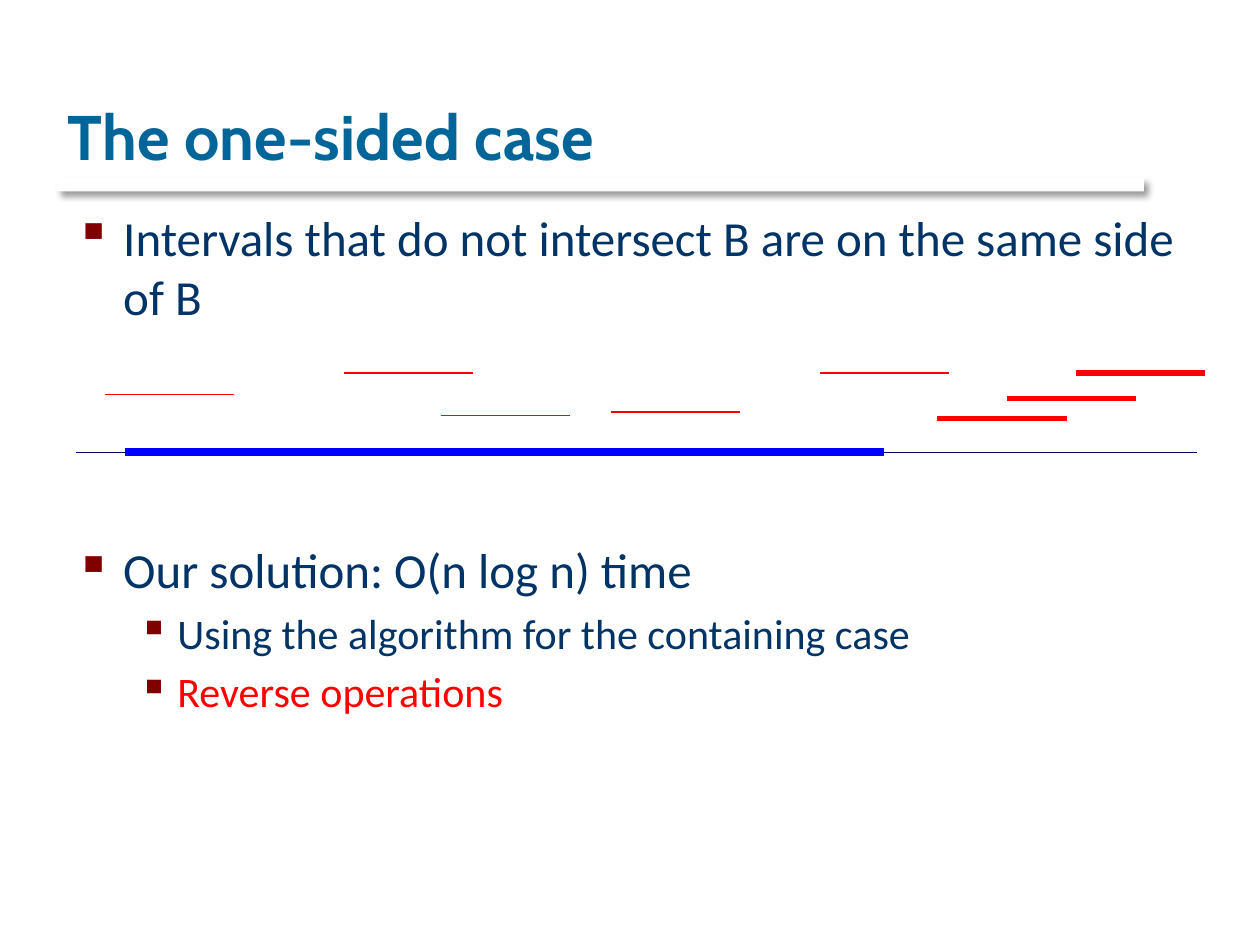
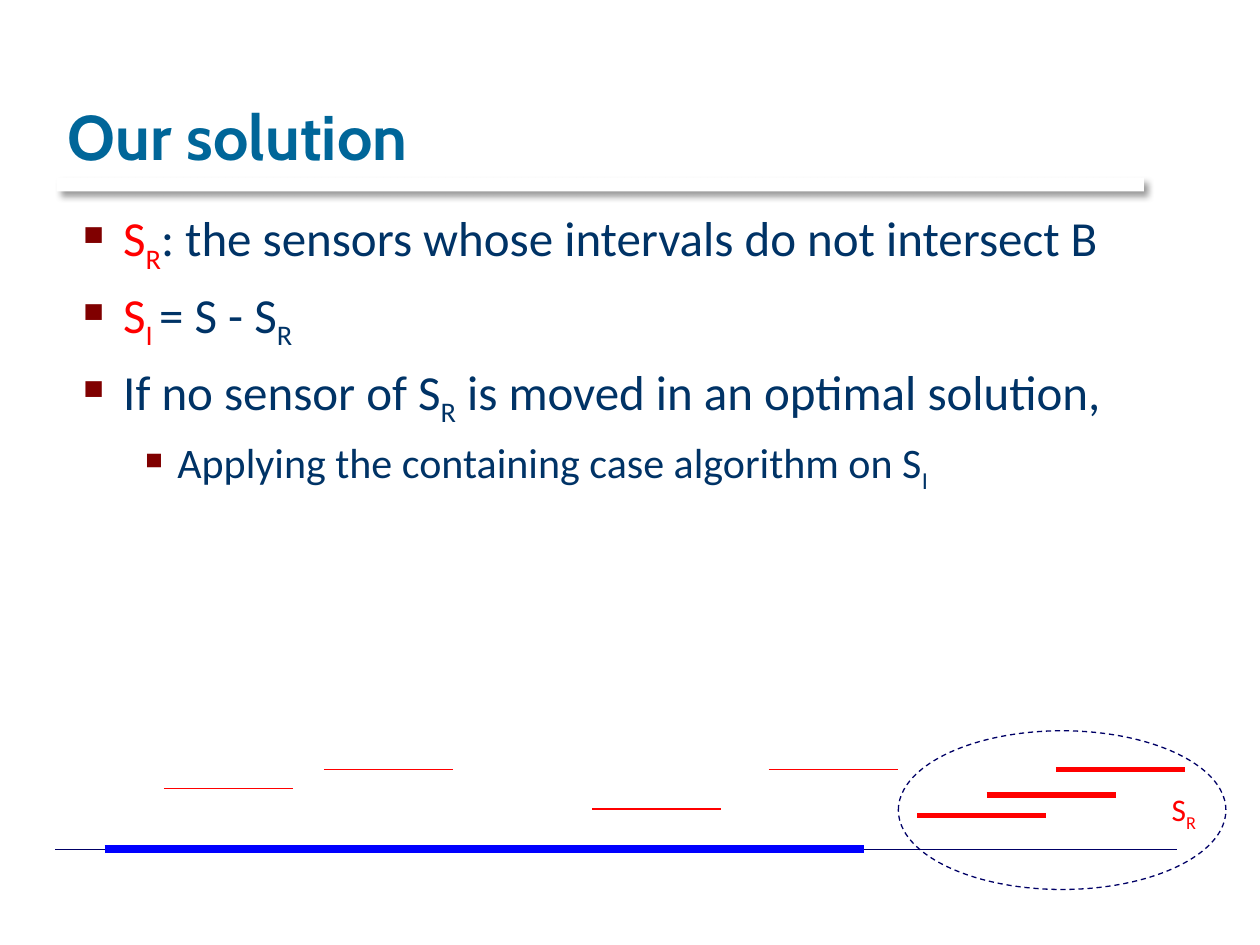
from dataclasses import dataclass

from lxml import etree
from pptx import Presentation
from pptx import util as u
from pptx.dml.color import RGBColor
from pptx.enum import dml, shapes, text
from pptx.oxml import ns


@dataclass(frozen=True)
class Theme:
    title: str = "006699"
    body: str = "003366"
    mark: str = "800000"
    hot: str = "FF0000"
    axis: str = "000066"
    span: str = "0000FF"
    paper: str = "FFFFFF"
    shade: str = "000000"
    head: str = "Cabin"
    font: str = "Calibri"
    big: int = 36
    sizes: tuple = (28, 24)      # by bullet level
    tag: int = 18
    thin: float = 0.75
    bold: float = 3
    wide: float = 4.5


T = Theme()
COLS, ROWS = 100, 75             # square grid over the slide
CELL = u.Inches(0.1)
INDENT = ((0.38, -0.38), (0.81, -0.31))
HOT, SUB = "hot", "sub"          # run flags


def grid(*cells):
    return [round(c * CELL) for c in cells]


def rgb(code):
    return RGBColor.from_string(code)


def node(parent, tag, **attrs):
    return etree.SubElement(parent, ns.qn(tag), attrs)


# ---- text ----
def add_run(para, words, size, color, font=T.font, sub=False):
    run = para.add_run()
    run.text = words
    run.font.size = u.Pt(size)
    run.font.name = font
    run.font.color.rgb = rgb(color)
    if sub:
        run.font._element.set("baseline", "-25000")
    return run


def add_runs(para, runs, size, color):
    for words, *flags in runs:
        add_run(para, words, size, T.hot if HOT in flags else color,
                sub=SUB in flags)


def text_box(slide, box, wrap=True):
    frame = slide.shapes.add_textbox(*grid(*box)).text_frame
    frame.word_wrap = wrap
    return frame


def bullets(slide, box, items):
    """Each item is (level, extra space before in points, runs)."""
    frame = text_box(slide, box)
    for i, (level, gap, runs) in enumerate(items):
        para = frame.add_paragraph() if i else frame.paragraphs[0]
        size = T.sizes[level]
        para.level = level
        para.space_before = u.Pt(0.2 * size + gap)
        props = para._p.get_or_add_pPr()
        left, hang = INDENT[level]
        props.set("marL", str(u.Inches(left)))
        props.set("indent", str(u.Inches(hang)))
        node(node(props, "a:buClr"), "a:srgbClr", val=T.mark)
        node(props, "a:buChar", char="▪")
        add_runs(para, runs, size, T.body)


# ---- title with its shadowed rule ----
def header(slide, words):
    bar = slide.shapes.add_shape(shapes.MSO_SHAPE.RECTANGLE,
                                 *grid(4.5, 14.1, 86.3, 1.1))
    bar.fill.solid()
    bar.fill.fore_color.rgb = rgb(T.paper)
    bar.line.fill.background()
    bar.shadow.inherit = False
    glow = node(bar._element.spPr.find(ns.qn("a:effectLst")), "a:outerShdw",
                blurRad=str(u.Pt(4)), dist=str(u.Pt(3)), dir="2700000",
                algn="tl", rotWithShape="0")
    node(node(glow, "a:srgbClr", val=T.shade), "a:alpha", val="40000")

    frame = text_box(slide, (4.4, 1.7, 85, 12.5))
    frame.vertical_anchor = text.MSO_ANCHOR.BOTTOM
    run = add_run(frame.paragraphs[0], words, T.big, T.title, T.head)
    run.font.bold = True
    run.font._element.set("spc", "10")


# ---- intervals above the axis ----
def level_line(slide, left, top, width, color, weight):
    x, y, end = grid(left, top, left + width)
    line = slide.shapes.add_connector(shapes.MSO_CONNECTOR.STRAIGHT,
                                      x, y, end, y)
    line.line.color.rgb = rgb(color)
    line.line.width = u.Pt(weight)
    node(line._element.spPr, "a:effectLst")


def diagram(slide, left, base, near):
    """near: (offset, height) of each interval that meets the barrier."""
    length = 10.25
    level_line(slide, left, base, 89, T.axis, T.thin)
    for dx, rise in near:
        level_line(slide, left + dx, base - rise, length, T.hot, T.thin)
    for i, rise in enumerate((2.7, 4.3, 6.3)):
        level_line(slide, left + 68.4 + 5.5 * i, base - rise, length,
                   T.hot, T.bold)
    level_line(slide, left + 3.9, base, 60.3, T.span, T.wide)


def far_set(slide, left, base):
    """Dashed ring and tag around the intervals off the barrier."""
    frame = text_box(slide, (left + 87.6, base - 5.2, 4.2, 4), wrap=False)
    add_runs(frame.paragraphs[0], [("S", HOT), ("R", HOT, SUB)], T.tag, T.hot)
    ring = slide.shapes.add_shape(shapes.MSO_SHAPE.OVAL,
                                  *grid(left + 66.9, base - 9.4, 26, 12.6))
    ring.shadow.inherit = False
    ring.fill.background()
    ring.line.color.rgb = rgb(T.axis)
    ring.line.width = u.Pt(T.thin)
    ring.line.dash_style = dml.MSO_LINE.DASH


# ---- slides ----
def one_sided(slide):
    header(slide, "The one-sided case")
    bullets(slide, (5, 16, 89.4, 50.3), [
        (0, 0, [("Intervals that do not intersect B are on the same side of B",)]),
        (0, 117, [("Our solution: O(n log n) time",)]),
        (1, 0, [("Using the algorithm for the containing case",)]),
        (1, 0, [("Reverse operations", HOT)]),
    ])
    diagram(slide, 6, 35.9, [(21.3, 6.3), (42.5, 3.2), (59.1, 6.3),
                             (2.3, 4.6), (29, 2.9)])


def solution(slide):
    header(slide, "Our solution")
    bullets(slide, (5, 16, 90, 24.6), [
        (0, 0, [("S", HOT), ("R", HOT, SUB),
                (": the sensors whose intervals do not intersect B",)]),
        (0, 0, [("S", HOT), ("I ", HOT, SUB), ("= S - S",), ("R", SUB)]),
        (0, 0, [("If no sensor of S",), ("R", SUB),
                (" is moved in an optimal solution,",)]),
        (1, 0, [("Applying the containing case algorithm on S",), ("I", SUB)]),
    ])
    left, base = 4.4, 67.4
    diagram(slide, left, base, [(21.3, 6.3), (42.6, 3.2), (56.6, 6.3),
                                (8.6, 4.8)])
    far_set(slide, left, base)


def main():
    deck = Presentation()
    deck.slide_width, deck.slide_height = grid(COLS, ROWS)
    blank = deck.slide_layouts[6]
    for build in (one_sided, solution):
        build(deck.slides.add_slide(blank))
    deck.save("out.pptx")


if __name__ == "__main__":
    main()
